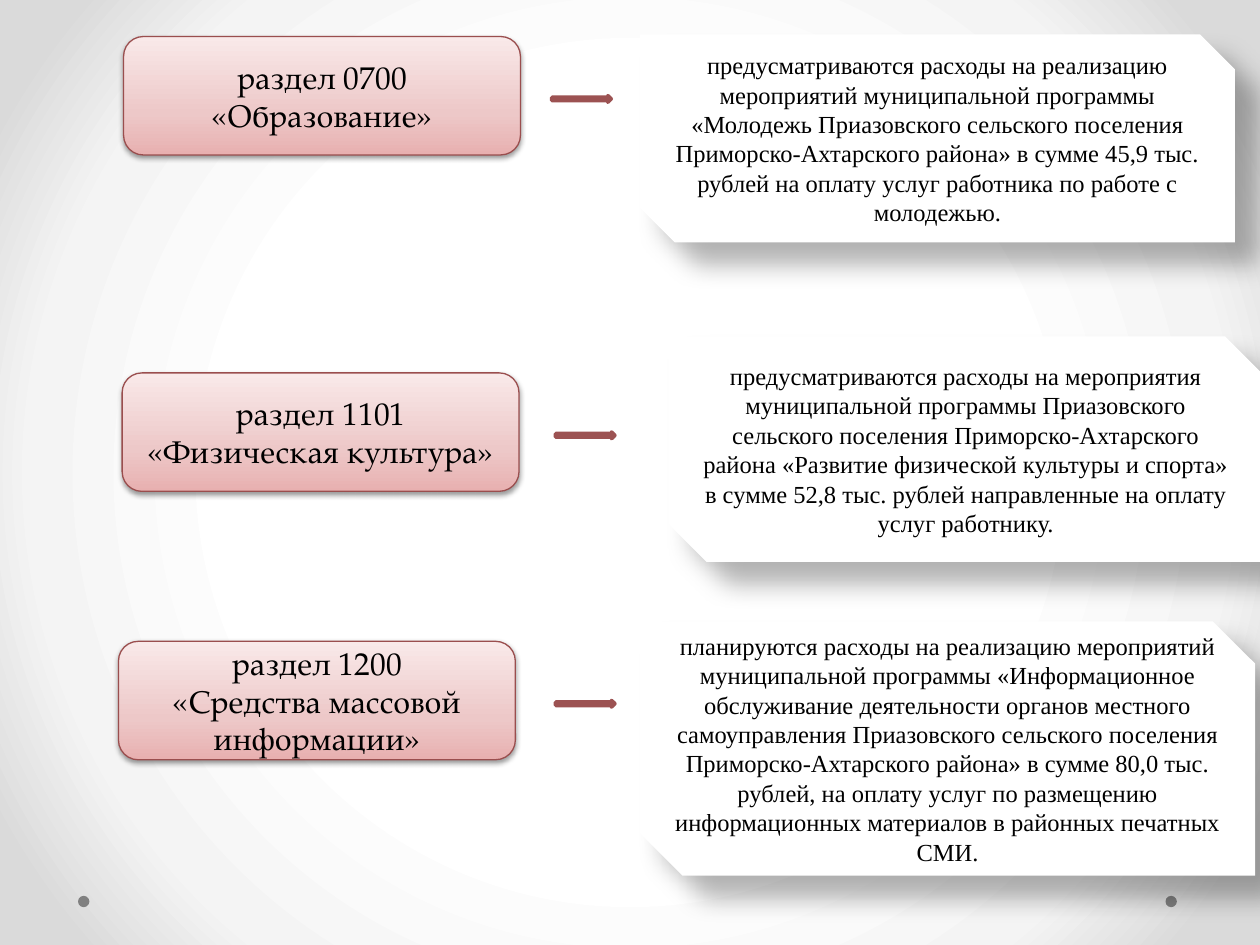
"""Build a slide of three budget sections, each pointing to its planned spending."""
from lxml.etree import SubElement
from pptx import Presentation
from pptx.dml.color import RGBColor
from pptx.enum.shapes import MSO_SHAPE
from pptx.enum.text import MSO_ANCHOR, PP_ALIGN
from pptx.oxml.ns import qn
from pptx.util import Pt

BLACK = RGBColor(0x00, 0x00, 0x00)
WHITE = RGBColor(0xFF, 0xFF, 0xFF)
GRAY = RGBColor(0x80, 0x80, 0x80)
BORDER = RGBColor(0x9A, 0x4E, 0x4E)
ARROW = RGBColor(0x9C, 0x52, 0x52)
PINK_STOPS = [
    (0, RGBColor(0xE8, 0xB0, 0xB0)),
    (35, RGBColor(0xED, 0xC8, 0xC8)),
    (100, RGBColor(0xF9, 0xE9, 0xE9)),
]
BACKDROP_STOPS = [
    (50, WHITE),
    (76, RGBColor(0xF4, 0xF4, 0xF4)),
    (92, RGBColor(0xDA, 0xDA, 0xDA)),
]

LABEL_WIDTH, LABEL_HEIGHT = 226.8, 67.7
ARROW_WIDTH, ARROW_HEIGHT = 33.8, 3.6
DOT_SIZE, DOT_TOP = 6.5, 511.9
DOT_LEFTS = (666, 44.6)

SECTIONS = [
    {
        "label": ["раздел 0700 «Образование»"],
        "label_at": (70.6, 20.9),
        "arrow_left": 315.4,
        "spending": "предусматриваются расходы на реализацию мероприятий "
        "муниципальной программы «Молодежь Приазовского сельского поселения "
        "Приморско-Ахтарского района» в сумме 45,9 тыс. рублей на оплату услуг "
        "работника по работе с молодежью.",
        "spending_box": (365.8, 19.7, 339.8, 118.8),
    },
    {
        "label": ["раздел 1101 «Физическая культура»"],
        "label_at": (69.8, 213.1),
        "arrow_left": 317.5,
        "spending": "предусматриваются расходы на мероприятия муниципальной "
        "программы Приазовского сельского поселения Приморско-Ахтарского района "
        "«Развитие физической культуры и спорта» в сумме 52,8 тыс. рублей "
        "направленные на оплату услуг работнику.",
        "spending_box": (382.3, 192.2, 339.1, 128.9),
    },
    {
        "label": ["раздел 1200", "«Средства массовой информации»"],
        "label_at": (67.7, 366.5),
        "arrow_left": 317.5,
        "spending": "планируются расходы на реализацию мероприятий муниципальной "
        "программы «Информационное обслуживание деятельности органов местного "
        "самоуправления Приазовского сельского поселения Приморско-Ахтарского "
        "района» в сумме 80,0 тыс. рублей, на оплату услуг по размещению "
        "информационных материалов в районных печатных СМИ.",
        "spending_box": (365.8, 355, 351.4, 145.4),
    },
]


class SlideBuilder:
    """Hold the slide and its style, with a method for each kind of element."""

    label_font = ("TeX Gyre Pagella", 18)
    spending_font = ("Times New Roman", 14)

    def __init__(self, slide):
        self.slide = slide

    def _color(self, parent, color):
        return SubElement(parent, qn("a:srgbClr"), val=str(color))

    def _gradient(self, fill, owner, stops):
        fill.gradient()
        gradient = owner.find(".//" + qn("a:gradFill"))
        for child in list(gradient):
            gradient.remove(child)
        stop_list = SubElement(gradient, qn("a:gsLst"))
        for position, color in stops:
            stop = SubElement(stop_list, qn("a:gs"), pos=str(position * 1000))
            self._color(stop, color)
        return gradient

    def _shadow(self, shape, opacity, blur, distance, angle):
        effects = shape.element.spPr.find(qn("a:effectLst"))
        shadow = SubElement(
            effects, qn("a:outerShdw"), blurRad=str(Pt(blur)), dist=str(Pt(distance)),
            dir=str(angle * 60000), algn="ctr", rotWithShape="0")
        tint = self._color(shadow, BLACK)
        SubElement(tint, qn("a:alpha"), val=str(opacity * 1000))

    def _shape(self, kind, box, fill=None, line=None, line_width=0.75):
        shape = self.slide.shapes.add_shape(kind, *(Pt(length) for length in box))
        if fill is not None:
            shape.fill.solid()
            shape.fill.fore_color.rgb = fill
        if line is None:
            shape.line.fill.background()
        else:
            shape.line.color.rgb = line
            shape.line.width = Pt(line_width)
        shape.shadow.inherit = False
        return shape

    def _write(self, shape, lines, font):
        frame = shape.text_frame
        frame.word_wrap = True
        frame.vertical_anchor = MSO_ANCHOR.MIDDLE
        frame.text = "\n".join(lines)
        name, size = font
        for paragraph in frame.paragraphs:
            paragraph.alignment = PP_ALIGN.CENTER
            paragraph.font.name = name
            paragraph.font.size = Pt(size)
            paragraph.font.color.rgb = BLACK

    def backdrop(self):
        gradient = self._gradient(
            self.slide.background.fill, self.slide.element, BACKDROP_STOPS)
        radial = SubElement(gradient, qn("a:path"), path="circle")
        SubElement(radial, qn("a:fillToRect"), l="50000", t="50000", r="50000", b="50000")

    def dot(self, left):
        self._shape(MSO_SHAPE.OVAL, (left, DOT_TOP, DOT_SIZE, DOT_SIZE), GRAY)

    def label(self, lines, left, top):
        box = (left, top, LABEL_WIDTH, LABEL_HEIGHT)
        label = self._shape(MSO_SHAPE.ROUNDED_RECTANGLE, box, line=BORDER)
        gradient = self._gradient(label.fill, label.element.spPr, PINK_STOPS)
        SubElement(gradient, qn("a:lin"), ang=str(270 * 60000), scaled="1")
        self._shadow(label, 38, 3.1, 1.6, 90)
        self._write(label, lines, self.label_font)

    def spending(self, text, box):
        card = self._shape(MSO_SHAPE.SNIP_2_DIAG_RECTANGLE, box, WHITE)
        self._shadow(card, 30, 15, 18, 45)
        self._write(card, [text], self.spending_font)

    def arrow(self, left, top):
        box = (left, top, ARROW_WIDTH, ARROW_HEIGHT)
        self._shape(MSO_SHAPE.RIGHT_ARROW, box, WHITE, ARROW, 2.25)


def main():
    presentation = Presentation()
    presentation.slide_width, presentation.slide_height = Pt(720), Pt(540)
    builder = SlideBuilder(presentation.slides.add_slide(presentation.slide_layouts[6]))
    builder.backdrop()
    for dot_left in DOT_LEFTS:
        builder.dot(dot_left)
    for section in SECTIONS:
        label_left, label_top = section["label_at"]
        builder.label(section["label"], label_left, label_top)
        builder.spending(section["spending"], section["spending_box"])
        builder.arrow(section["arrow_left"], label_top + LABEL_HEIGHT / 2)
    presentation.save("out.pptx")


if __name__ == "__main__":
    main()
